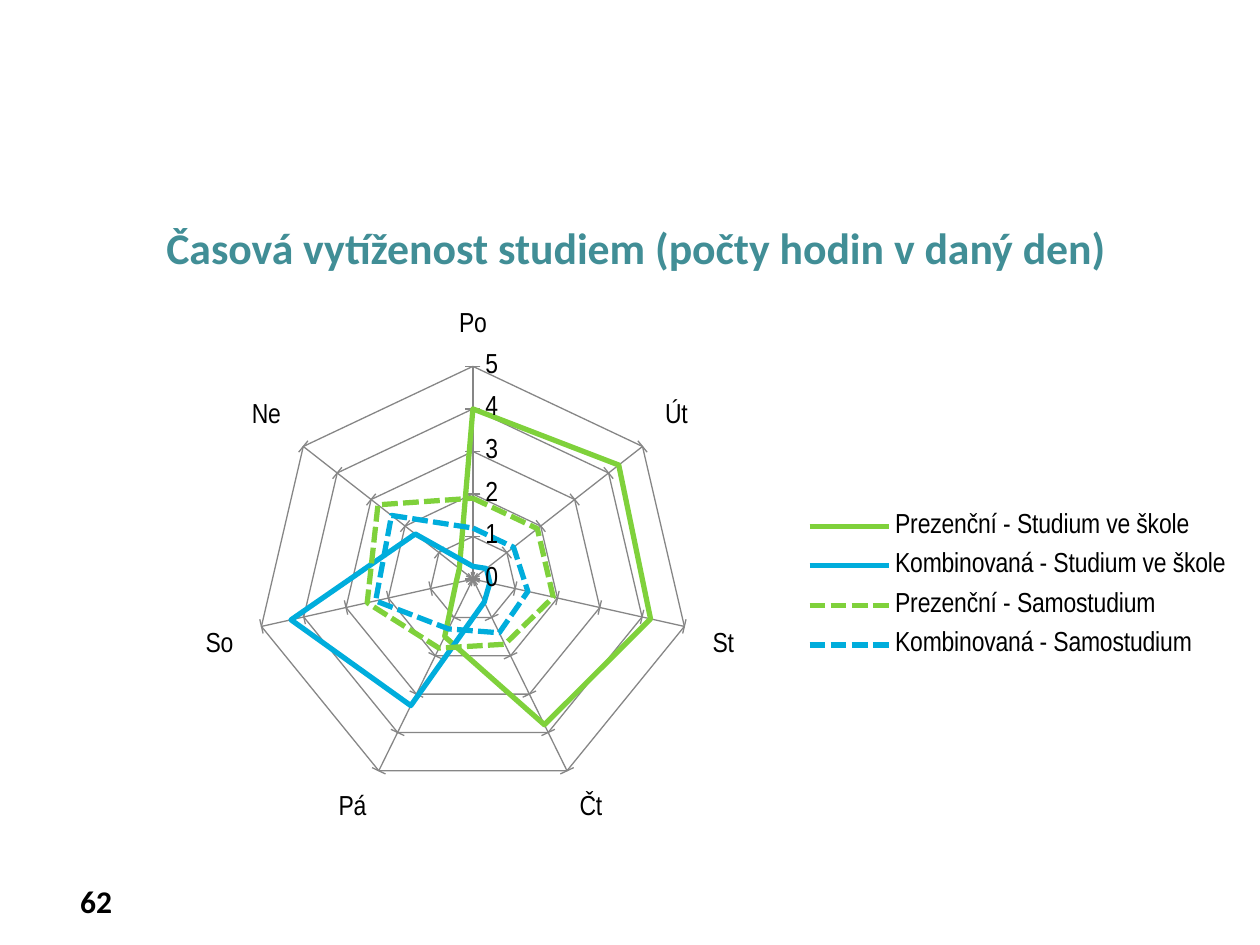
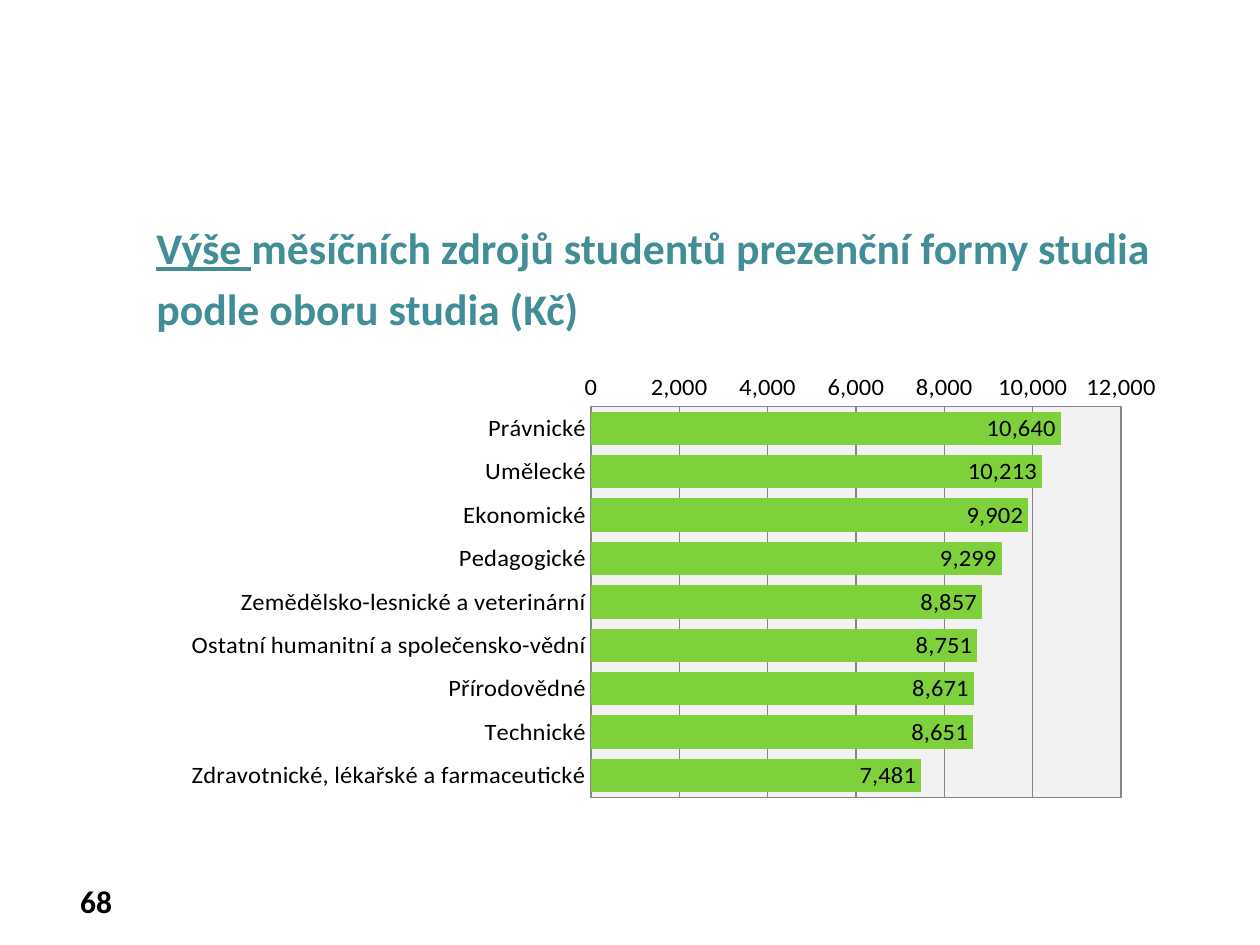
from lxml import etree
from pptx import Presentation
from pptx.chart.data import CategoryChartData
from pptx.dml.color import RGBColor
from pptx.enum.chart import (XL_AXIS_CROSSES, XL_CHART_TYPE, XL_LABEL_POSITION,
                             XL_LEGEND_POSITION, XL_TICK_MARK)
from pptx.enum.dml import MSO_LINE
from pptx.enum.text import MSO_ANCHOR, MSO_AUTO_SIZE, PP_ALIGN
from pptx.oxml.ns import qn
from pptx.util import Cm, Pt

RADAR, BAR = XL_CHART_TYPE.RADAR, XL_CHART_TYPE.BAR_CLUSTERED
NO_TICK, CROSS, OUTSIDE = XL_TICK_MARK.NONE, XL_TICK_MARK.CROSS, XL_TICK_MARK.OUTSIDE
SOLID, DASHED = MSO_LINE.SOLID, MSO_LINE.SQUARE_DOT

COLORS = {"title": "418E96", "text": "000000", "green": "7FD13B", "blue": "00ADDC",
          "grid": "868686", "plot": "F2F2F2"}
TITLE_FONT, RADAR_FONT = "Calibri", "Arial Narrow"
THOUSANDS = "#,##0"

# Titles are lists of paragraphs; each paragraph is a list of (text, underlined).
WORKLOAD_TITLE = [[("Časová vytíženost studiem (počty hodin v daný den)", False)]]
INCOME_TITLE = [
    [("Výše ", True), ("měsíčních zdrojů studentů prezenční formy studia", False)],
    [("podle oboru studia (Kč)", False)],
]

DAYS = ["Po", "Út", "St", "Čt", "Pá", "So", "Ne"]
WORKLOAD = [
    ("Prezenční - Studium ve škole", "green", SOLID, [4, 4.3, 4.2, 3.8, 1.5, 0.4, 0.4]),
    ("Kombinovaná - Studium ve škole", "blue", SOLID, [0.3, 0.4, 0.4, 0.6, 3.3, 4.3, 1.7]),
    ("Prezenční - Samostudium", "green", DASHED, [1.9, 1.9, 1.9, 1.7, 1.8, 2.5, 2.8]),
    ("Kombinovaná - Samostudium", "blue", DASHED, [1.2, 1.2, 1.3, 1.4, 1.3, 2.3, 2.4]),
]
INCOME = {
    "Právnické": 10640,
    "Umělecké": 10213,
    "Ekonomické": 9902,
    "Pedagogické": 9299,
    "Zemědělsko-lesnické a veterinární": 8857,
    "Ostatní humanitní a společensko-vědní": 8751,
    "Přírodovědné": 8671,
    "Technické": 8651,
    "Zdravotnické, lékařské a farmaceutické": 7481,
}


def color(name):
    return RGBColor.from_string(COLORS[name])


def style_font(font, name, size, color_name="text", bold=False):
    font.name, font.size, font.bold = name, Pt(size), bold
    font.color.rgb = color(color_name)


def add_page(deck, title, title_left, number):
    page = deck.slides.add_slide(deck.slide_layouts[5])
    box = page.shapes.title
    box.left, box.top, box.width, box.height = Cm(title_left), Cm(4.32), Cm(22.3), Cm(2.21)
    frame = box.text_frame
    frame.auto_size = MSO_AUTO_SIZE.NONE
    frame.word_wrap = True
    frame.vertical_anchor = MSO_ANCHOR.TOP
    for index, spans in enumerate(title):
        para = frame.add_paragraph() if index else frame.paragraphs[0]
        para.alignment = PP_ALIGN.LEFT
        para.space_before = Pt(5 if index else 0)
        style_font(para.font, TITLE_FONT, 25, "title", bold=True)
        for text, underlined in spans:
            span = para.add_run()
            span.text = text
            if underlined:
                span.font.underline = True

    frame = page.shapes.add_textbox(Cm(0.71), Cm(17.65), Cm(1.8), Cm(1.02)).text_frame
    frame.word_wrap = True
    frame.vertical_anchor = MSO_ANCHOR.MIDDLE
    para = frame.paragraphs[0]
    para.text = str(number)
    para.alignment = PP_ALIGN.RIGHT
    style_font(para.font, TITLE_FONT, 18, bold=True)
    return page


def place(element, position, fractions, inner=False):
    """Give a chart part a manual layout: x, y, w, h as fractions of the chart."""
    for old in element.findall(qn("c:layout")):
        element.remove(old)
    layout = etree.Element(qn("c:layout"))
    manual = etree.SubElement(layout, qn("c:manualLayout"))
    settings = [("layoutTarget", "inner")] if inner else []
    settings += [("xMode", "edge"), ("yMode", "edge"), *zip("xywh", fractions)]
    for tag, value in settings:
        etree.SubElement(manual, qn(f"c:{tag}")).set("val", str(value))
    element.insert(position, layout)


def fill_plot_area(plot_area):
    properties = etree.SubElement(plot_area, qn("c:spPr"))
    outline = etree.Element(qn("a:ln"), w=str(Pt(0.75)))
    for parent, name in ((properties, "plot"), (outline, "grid")):
        fill = etree.SubElement(parent, qn("a:solidFill"))
        etree.SubElement(fill, qn("a:srgbClr")).set("val", COLORS[name])
    properties.append(outline)


def add_chart(page, kind, data, area, plot, font, size, top, step):
    chart = page.shapes.add_chart(kind, *(Cm(length) for length in area), data).chart
    chart.has_title = False
    chart.has_legend = False
    style_font(chart.font, font, size)
    scale = chart.value_axis
    scale.minimum_scale, scale.maximum_scale, scale.major_unit = 0, top, step
    scale.has_major_gridlines = True
    scale.tick_labels.number_format = THOUSANDS
    chart.category_axis.tick_labels.number_format = "General"
    for axis in (scale, chart.category_axis):
        axis.tick_labels.number_format_is_linked = False
        axis.major_tick_mark = axis.minor_tick_mark = NO_TICK
        axis.format.line.color.rgb = color("grid")
        axis.format.line.width = Pt(0.75)
    grid = scale.major_gridlines.format.line
    grid.color.rgb, grid.width = color("grid"), Pt(0.75)
    place(chart.plots[0]._element.getparent(), 0, plot, inner=True)
    return chart


def add_workload_chart(page):
    data = CategoryChartData()
    data.categories = DAYS
    for name, _, _, hours in WORKLOAD:
        data.add_series(name, hours)
    chart = add_chart(page, RADAR, data, (3.71, 6.32, 21.41, 12.73),
                      (0.058, 0.066, 0.428, 0.687), RADAR_FONT, 16, 5, 1)
    chart.value_axis.major_tick_mark = CROSS
    chart.category_axis.major_tick_mark = OUTSIDE
    chart.category_axis.has_major_gridlines = True
    chart.category_axis.major_gridlines.format.line.color.rgb = color("grid")
    for series, (_, hue, dash, _) in zip(chart.plots[0].series, WORKLOAD):
        line = series.format.line
        line.color.rgb, line.width, line.dash_style = color(hue), Pt(3), dash
    chart.has_legend = True
    chart.legend.position = XL_LEGEND_POSITION.BOTTOM
    chart.legend.include_in_layout = False
    place(chart.legend._element, 1, (0.575, 0.28, 0.42, 0.28))


def add_income_chart(page):
    data = CategoryChartData(number_format=THOUSANDS)
    data.categories = list(INCOME)
    data.add_series("Series 1", list(INCOME.values()))
    chart = add_chart(page, BAR, data, (3.1, 7.52, 20.4, 9.6),
                      (0.432, 0.029, 0.524, 0.857), TITLE_FONT, 14, 12000, 2000)
    chart.category_axis.reverse_order = True
    chart.category_axis.crosses = XL_AXIS_CROSSES.MAXIMUM
    plot = chart.plots[0]
    plot.gap_width = 30
    plot.vary_by_categories = False
    bars = plot.series[0].format.fill
    bars.solid()
    bars.fore_color.rgb = color("green")
    labels = plot.series[0].data_labels
    labels.show_value = True
    labels.position = XL_LABEL_POSITION.INSIDE_END
    labels.number_format = THOUSANDS
    labels.number_format_is_linked = False
    fill_plot_area(plot._element.getparent())


def main():
    deck = Presentation()
    deck.slide_width, deck.slide_height = Cm(25.4), Cm(19.05)
    add_workload_chart(add_page(deck, WORKLOAD_TITLE, 3.1, 62))
    add_income_chart(add_page(deck, INCOME_TITLE, 2.9, 68))
    deck.save("out.pptx")


if __name__ == "__main__":
    main()
